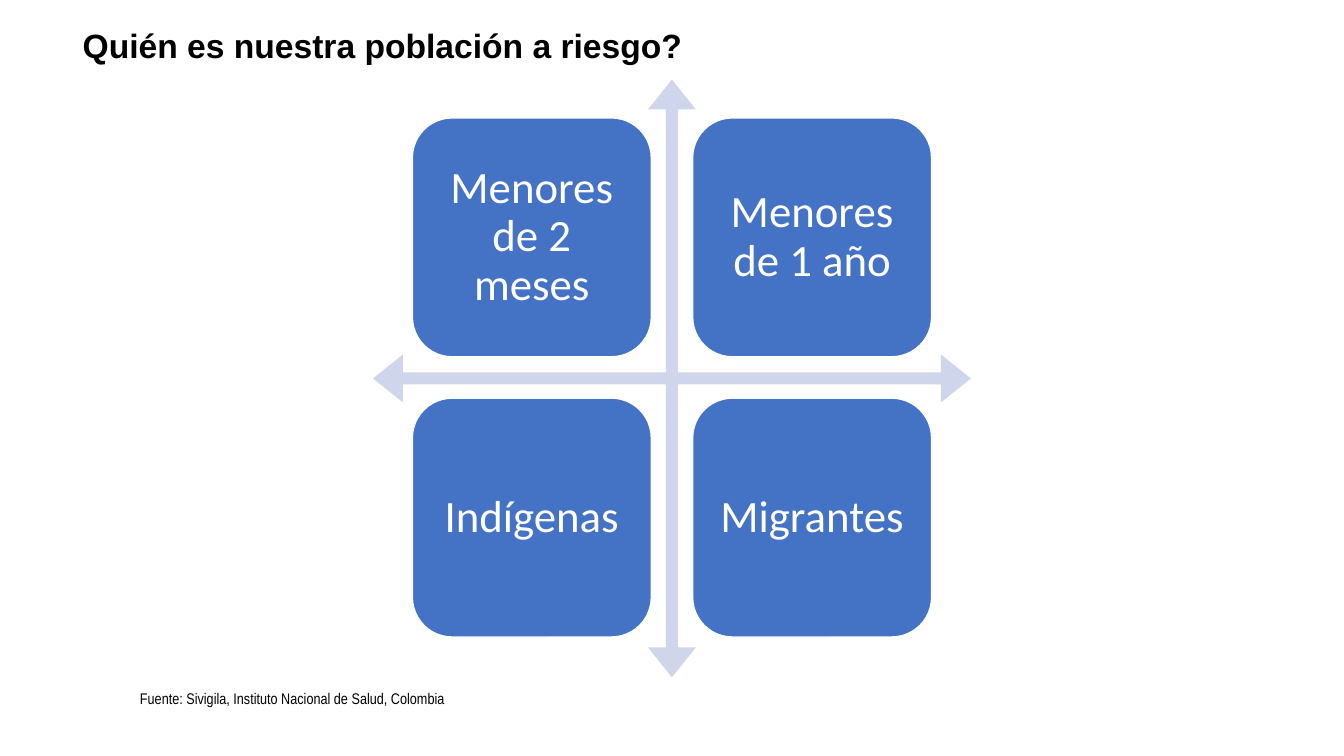
from pptx import Presentation
from pptx.dml.color import RGBColor
from pptx.enum import shapes, text
from pptx.util import Inches, Pt

COLORS = {"black": "000000", "white": "FFFFFF", "arrows": "CFD5EA", "card": "4472C4"}
GROUPS = [["Menores de 2 meses", "Menores de 1 año"], ["Indígenas", "Migrantes"]]
CARD_SIZE = 2.37
CARD_STEP = 2.78
CARD_INSET = 0.13


def color(name):
    return RGBColor.from_string(COLORS[name])


def write(paragraph, wording, font_name, size, color_name, bold=False):
    run = paragraph.add_run()
    run.text = wording
    run.font.name = font_name
    run.font.size = Pt(size)
    run.font.bold = bold
    run.font.color.rgb = color(color_name)


def place(shape, left, top, width, height):
    shape.left, shape.top = Inches(left), Inches(top)
    shape.width, shape.height = Inches(width), Inches(height)


def add_title(slide, wording):
    title = slide.shapes.title
    place(title, 0.72, 0.24, 11.79, 0.66)
    frame = title.text_frame
    frame.vertical_anchor = text.MSO_ANCHOR.TOP
    heading = frame.paragraphs[0]
    heading.alignment = text.PP_ALIGN.LEFT
    heading.line_spacing = 0.9
    write(heading, wording, "Arial", 24, "black", bold=True)


def add_source(slide, wording):
    source = slide.shapes.add_textbox(Inches(1.29), Inches(6.79), Inches(4.33), Inches(0.3))
    source.text_frame.word_wrap = True
    write(source.text_frame.paragraphs[0], wording, "Arial Narrow", 11, "black")


def add_cross_arrows(slide):
    arrows = slide.shapes.add_shape(
        shapes.MSO_SHAPE.QUAD_ARROW, Inches(3.7), Inches(0.79), Inches(5.93), Inches(5.93))
    arrows.shadow.inherit = False
    for index, share in enumerate((0.02, 0.04, 0.05)):
        arrows.adjustments[index] = share
    arrows.fill.solid()
    arrows.fill.fore_color.rgb = color("arrows")
    arrows.line.fill.background()


def add_card(slide, wording, left, top):
    card = slide.shapes.add_shape(
        shapes.MSO_SHAPE.ROUNDED_RECTANGLE,
        Inches(left), Inches(top), Inches(CARD_SIZE), Inches(CARD_SIZE))
    card.shadow.inherit = False
    card.fill.solid()
    card.fill.fore_color.rgb = color("card")
    card.line.color.rgb = color("white")
    card.line.width = Pt(1)

    frame = card.text_frame
    frame.word_wrap = True
    frame.vertical_anchor = text.MSO_ANCHOR.MIDDLE
    frame.margin_left = frame.margin_right = Inches(CARD_INSET)
    frame.margin_top = frame.margin_bottom = Inches(CARD_INSET)
    label = frame.paragraphs[0]
    label.alignment = text.PP_ALIGN.CENTER
    label.line_spacing = 0.9
    write(label, wording, "Calibri", 32, "white")


def main():
    deck = Presentation()
    deck.slide_width, deck.slide_height = Inches(13.33), Inches(7.5)
    slide = deck.slides.add_slide(deck.slide_layouts[5])
    add_title(slide, "Quién es nuestra población a riesgo?")
    add_source(slide, "Fuente: Sivigila, Instituto Nacional de Salud, Colombia")
    add_cross_arrows(slide)
    for row, names in enumerate(GROUPS):
        for column, name in enumerate(names):
            add_card(slide, name, 4.09 + column * CARD_STEP, 1.17 + row * CARD_STEP)
    deck.save("out.pptx")


if __name__ == "__main__":
    main()
